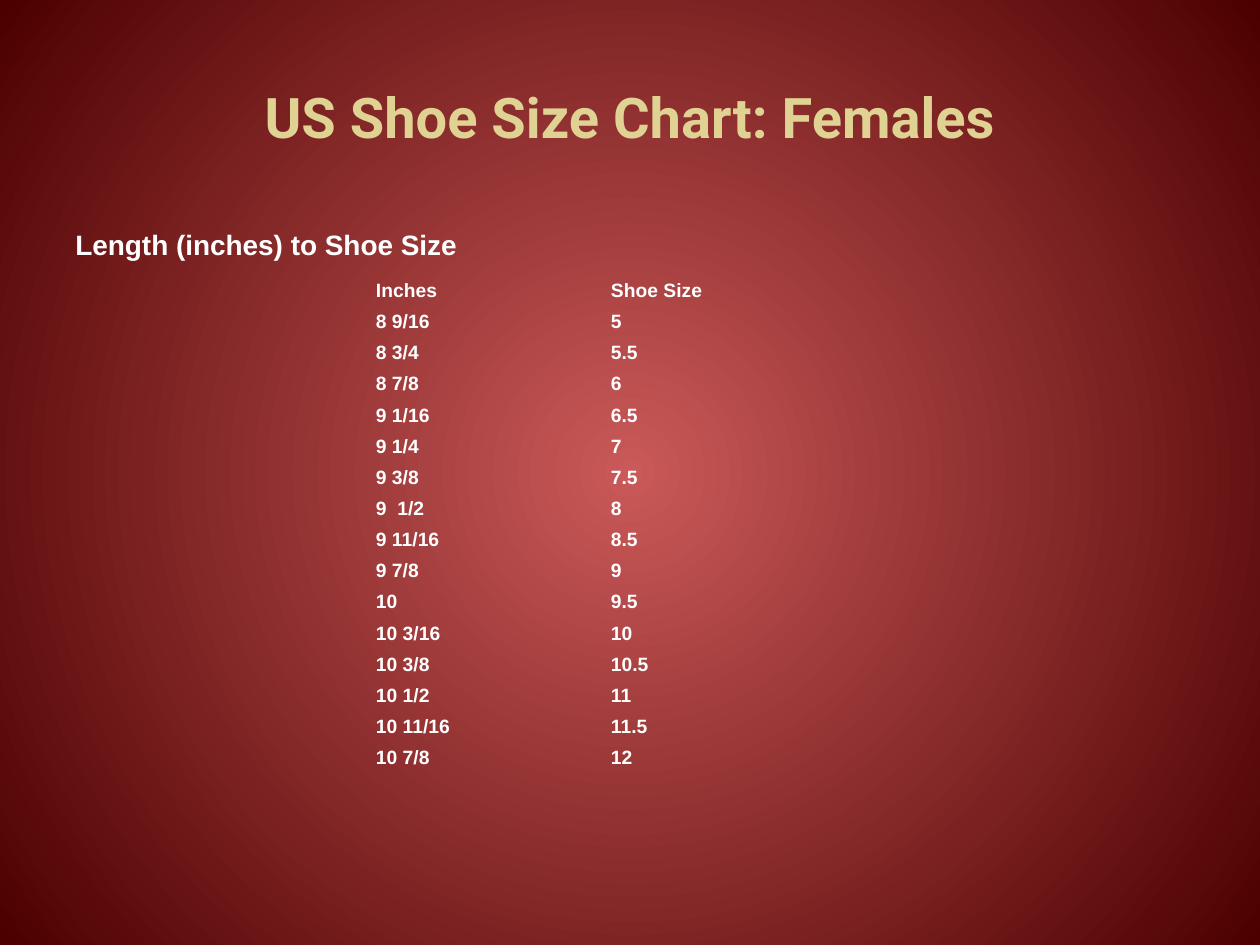
"""Builds a slide with a table of US shoe sizes for females."""
from dataclasses import dataclass

from lxml import etree
from pptx import Presentation
from pptx import util as u
from pptx.dml.color import RGBColor
from pptx.enum import text
from pptx.oxml.ns import qn

SCALE = 914400 // 126
PLAIN = "{2D5ABB26-0587-4C30-8999-92F81FD0307C}"
ROWS = 20
SIZES = [
    ("Inches", "Shoe Size"), ("8 9/16", "5"), ("8 3/4", "5.5"),
    ("8 7/8", "6"), ("9 1/16", "6.5"), ("9 1/4", "7"), ("9 3/8", "7.5"),
    ("9  1/2", "8"), ("9 11/16", "8.5"), ("9 7/8", "9"), ("10", "9.5"),
    ("10 3/16", "10"), ("10 3/8", "10.5"), ("10 1/2", "11"),
    ("10 11/16", "11.5"), ("10 7/8", "12"),
]


@dataclass(frozen=True)
class Theme:
    glow: str = "CA5959"
    edge: str = "4C0000"
    gold: str = "DFD293"
    white: str = "FFFFFF"
    head: str = "Roboto"
    body: str = "Arial"
    title: int = 32
    lead: int = 16
    cell: int = 11


THEME = Theme()


def px(num):
    return u.Emu(num * SCALE)


def add_run(para, words, size, face, color):
    run = para.add_run()
    run.text = words
    font = run.font
    font.size, font.name, font.bold = u.Pt(size), face, True
    font.color.rgb = RGBColor.from_string(color)


def place(shape, left, top, width, height):
    shape.left, shape.top = px(left), px(top)
    shape.width, shape.height = px(width), px(height)


def paint_back(slide):
    fill = slide.background.fill
    fill.gradient()
    for stop, color in zip(fill.gradient_stops, (THEME.glow, THEME.edge)):
        stop.color.rgb = RGBColor.from_string(color)
    grad = slide.element.find(".//" + qn("a:gradFill"))
    grad.remove(grad.find(qn("a:lin")))
    path = etree.SubElement(grad, qn("a:path"), path="circle")
    etree.SubElement(path, qn("a:fillToRect"),
                     l="50000", t="50000", r="50000", b="50000")


def add_title(slide, words):
    title = slide.shapes.title
    place(title, 63, 38, 1134, 157)
    frame = title.text_frame
    frame.vertical_anchor = text.MSO_ANCHOR.MIDDLE
    para = frame.paragraphs[0]
    para.alignment = text.PP_ALIGN.CENTER
    add_run(para, words, THEME.title, THEME.head, THEME.gold)


def add_lead(slide, words):
    box = slide.shapes.add_textbox(px(63), px(221), px(1134), px(624))
    box.text_frame.word_wrap = True
    add_run(box.text_frame.paragraphs[0], words,
            THEME.lead, THEME.body, THEME.white)


def fill_cell(cell, words):
    cell.fill.background()
    cell.margin_left = cell.margin_right = px(8)
    cell.margin_top = cell.margin_bottom = px(4)
    para = cell.text_frame.paragraphs[0]
    if words:
        add_run(para, words, THEME.cell, THEME.body, THEME.white)
    else:
        etree.SubElement(para._p, qn("a:endParaRPr"), sz=str(THEME.cell * 100))


def add_sizes(slide):
    shape = slide.shapes.add_table(ROWS, 2, px(368), px(276), px(586), px(624))
    table = shape.table
    table.first_row = table.horz_banding = False
    shape._element.find(".//" + qn("a:tableStyleId")).text = PLAIN
    for col, width in zip(table.columns, (235, 351)):
        col.width = px(width)
    blank = [("", "")] * (ROWS - len(SIZES))
    for row, pair in zip(table.rows, SIZES + blank):
        for cell, words in zip(row.cells, pair):
            fill_cell(cell, words)


def main():
    deck = Presentation()
    deck.slide_width, deck.slide_height = px(1260), px(945)
    slide = deck.slides.add_slide(deck.slide_layouts[5])
    paint_back(slide)
    add_title(slide, "US Shoe Size Chart: Females")
    add_lead(slide, "Length (inches) to Shoe Size")
    add_sizes(slide)
    deck.save("out.pptx")


if __name__ == "__main__":
    main()
